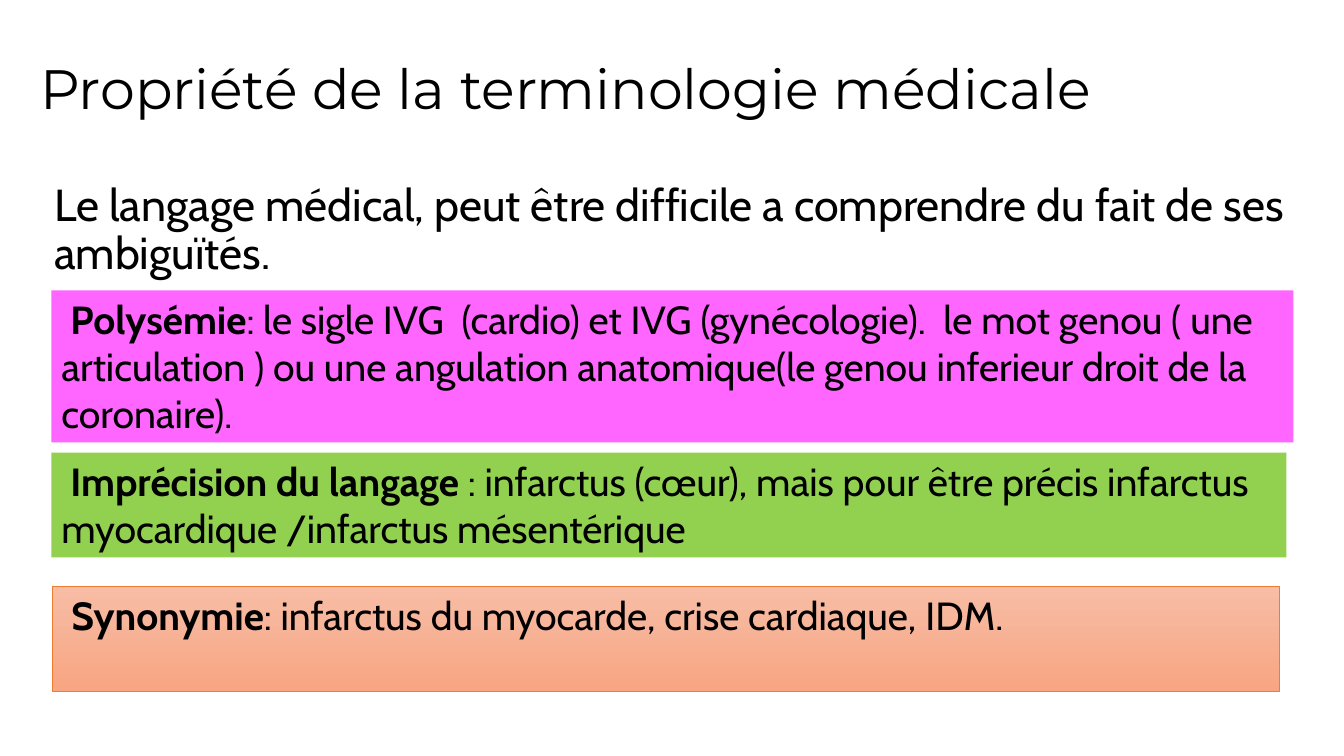
from lxml.etree import SubElement
from pptx import Presentation
from pptx.dml.color import RGBColor
from pptx.enum.shapes import MSO_SHAPE as Shape
from pptx.enum.text import MSO_ANCHOR as Anchor, MSO_AUTO_SIZE as AutoSize, PP_ALIGN as Align
from pptx.oxml.ns import qn
from pptx.util import Inches, Pt

BLACK = RGBColor(0x00, 0x00, 0x00)
PINK = RGBColor(0xFF, 0x66, 0xFF)
GREEN = RGBColor(0x92, 0xD0, 0x50)
PEACH = RGBColor(0xF7, 0xBD, 0xA5)
SALMON = RGBColor(0xF8, 0xA5, 0x82)
ORANGE = RGBColor(0xED, 0x7D, 0x31)


class TerminologySlide:
    """Style and current slide; every area is in percent of the slide's size."""

    title_font, body_font = "Montserrat", "Cabin"
    first_line_indent = Inches(0.09)
    definition_tab = Inches(2.26)

    def __init__(self, presentation):
        self.width = presentation.slide_width
        self.height = presentation.slide_height
        self.slide = presentation.slides.add_slide(presentation.slide_layouts[5])

    def area(self, left, top, width, height):
        return (int(self.width * left / 100), int(self.height * top / 100),
                int(self.width * width / 100), int(self.height * height / 100))

    def format_text(self, shape, font_name, size, anchor=Anchor.TOP, line_spacing=1.0):
        frame = shape.text_frame
        frame.word_wrap = True
        frame.auto_size = AutoSize.NONE
        frame.vertical_anchor = anchor
        paragraph = frame.paragraphs[0]
        paragraph.alignment = Align.LEFT
        paragraph.line_spacing = line_spacing
        paragraph.font.name = font_name
        paragraph.font.size = Pt(size)
        paragraph.font.color.rgb = BLACK
        return paragraph

    def title(self, text, *area):
        shape = self.slide.shapes.title
        shape.left, shape.top, shape.width, shape.height = self.area(*area)
        shape.text_frame.text = text
        self.format_text(shape, self.title_font, 39.6, Anchor.MIDDLE, 0.9)

    def introduction(self, text, *area):
        shape = self.slide.shapes.add_textbox(*self.area(*area))
        shape.text_frame.text = text
        self.format_text(shape, self.body_font, 32, line_spacing=0.9)

    def definition(self, term, text, colours, *area, line=None):
        shape = self.slide.shapes.add_shape(Shape.RECTANGLE, *self.area(*area))
        shape.shadow.inherit = False
        # One colour fills plainly, two make a downward gradient
        if len(colours) == 1:
            shape.fill.solid()
            shape.fill.fore_color.rgb = colours[0]
        else:
            shape.fill.gradient()
            shape.fill.gradient_angle = 270
            for stop, colour in zip(shape.fill.gradient_stops, colours):
                stop.color.rgb = colour
        if line is None:
            shape.line.fill.background()
        else:
            shape.line.color.rgb = line
            shape.line.width = Pt(0.5)

        paragraph = self.format_text(shape, self.body_font, 28)
        for words, bold in ((term, True), (text, False)):
            run = paragraph.add_run()
            run.text = words
            run.font.bold = bold
        # First-line indent, and a tab stop for the start of the definition
        properties = paragraph._p.get_or_add_pPr()
        properties.set("marL", "0")
        properties.set("indent", str(self.first_line_indent))
        if "\t" in text:
            tab_list = SubElement(properties, qn("a:tabLst"))
            SubElement(tab_list, qn("a:tab"), pos=str(self.definition_tab), algn="l")
            # The schema wants the tab list before the default run properties
            properties.find(qn("a:defRPr")).addprevious(tab_list)


def main():
    presentation = Presentation()
    presentation.slide_width, presentation.slide_height = Inches(13.33), Inches(7.5)
    slide = TerminologySlide(presentation)

    # Heading and introduction
    slide.title("Propriété de la terminologie médicale", 2.25, 5.33, 93, 13.47)
    slide.introduction(
        "Le langage médical, peut être difficile a comprendre du fait de ses ambiguïtés.",
        3.3, 23.47, 93.45, 13.47)

    # Three kinds of ambiguity
    slide.definition(
        "Polysémie",
        ":\tle sigle IVG  (cardio) et IVG (gynécologie).  le mot genou ( une articulation ) "
        "ou une angulation anatomique(le genou inferieur droit de la coronaire).",
        [PINK], 3.83, 38.4, 92.4, 20.13)
    slide.definition(
        "Imprécision du langage ",
        ": infarctus (cœur), mais pour être précis infarctus myocardique "
        "/infarctus mésentérique",
        [GREEN], 3.83, 59.87, 91.88, 13.87)
    slide.definition(
        "Synonymie", ": infarctus du myocarde, crise cardiaque, IDM.",
        [PEACH, SALMON], 3.9, 77.6, 91.28, 13.87, line=ORANGE)

    presentation.save("out.pptx")


if __name__ == "__main__":
    main()
